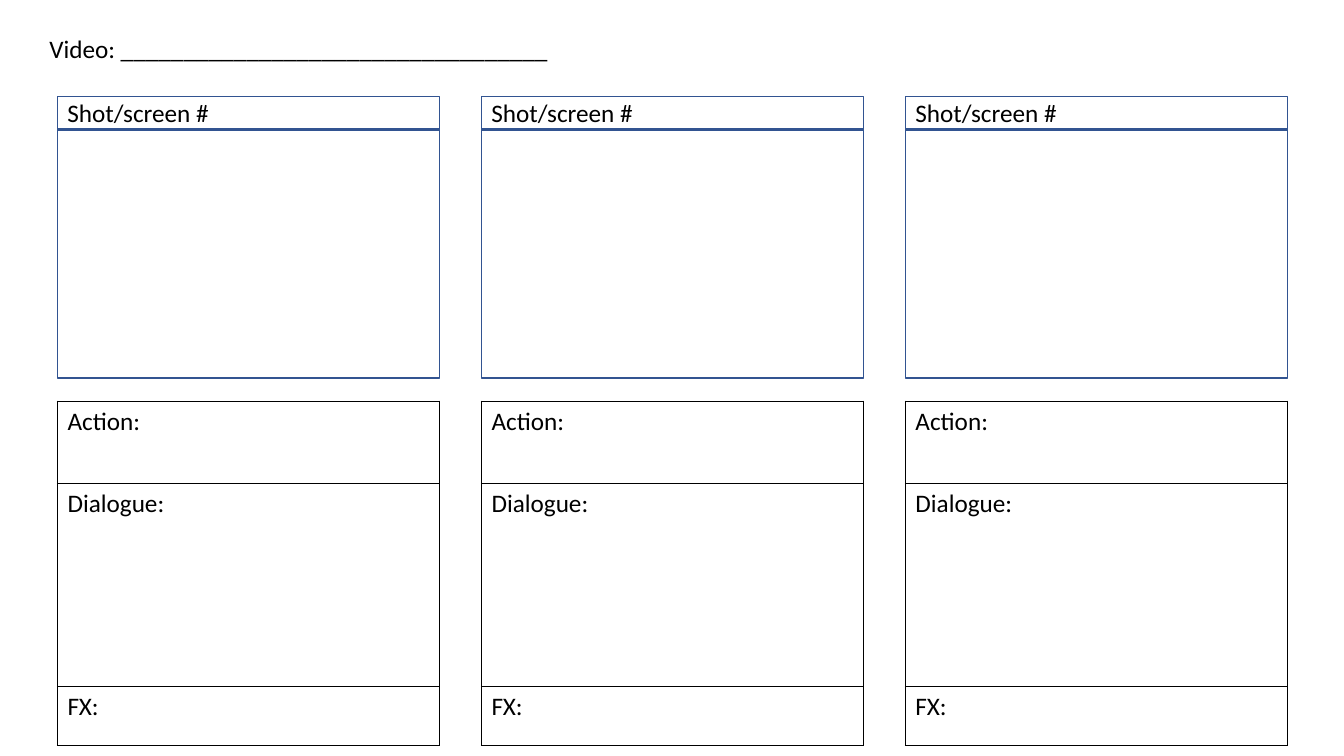
"""Build a three-column video storyboard sheet."""
from dataclasses import dataclass

from lxml.etree import SubElement
from pptx import Presentation
from pptx.dml.color import RGBColor
from pptx.enum.shapes import MSO_SHAPE
from pptx.enum.text import MSO_ANCHOR, MSO_AUTO_SIZE, PP_ALIGN
from pptx.oxml.ns import qn
from pptx.slide import Slide
from pptx.table import _Cell
from pptx.text.text import TextFrame
from pptx.util import Inches, Pt

BLACK = RGBColor(0x00, 0x00, 0x00)
FRAME_BLUE = RGBColor(0x32, 0x54, 0x91)
FONT_NAME = "Calibri"
FONT_SIZE = Pt(18)
LINE_WIDTH = Pt(1)

PANEL_COUNT = 3
PANEL_LEFT = 0.57
PANEL_PITCH = 4.205
PANEL_WIDTH = 3.79
NOTES_TOP = 3.98


@dataclass(frozen=True)
class Frame:
    top: float
    height: float
    label: str = ""


@dataclass(frozen=True)
class NoteRow:
    label: str
    height: float


FRAMES = [Frame(1.29, 2.46), Frame(0.96, 0.32, "Shot/screen #")]
NOTE_ROWS = [NoteRow("Action:", 0.82), NoteRow("Dialogue:", 2.01), NoteRow("FX:", 0.59)]


def write_text(text_frame: TextFrame, text: str) -> None:
    paragraph = text_frame.paragraphs[0]
    paragraph.alignment = PP_ALIGN.LEFT
    run = paragraph.add_run()
    run.text = text
    run.font.name = FONT_NAME
    run.font.size = FONT_SIZE
    run.font.color.rgb = BLACK


def add_title(slide: Slide) -> None:
    shape = slide.shapes.add_textbox(Inches(0.39), Inches(0.28), Inches(5.21), Inches(0.4))
    shape.text_frame.word_wrap = False
    shape.text_frame.auto_size = MSO_AUTO_SIZE.SHAPE_TO_FIT_TEXT
    write_text(shape.text_frame, "Video: " + "_" * 34)


def add_frame(slide: Slide, left: float, frame: Frame) -> None:
    shape = slide.shapes.add_shape(
        MSO_SHAPE.RECTANGLE, Inches(left), Inches(frame.top),
        Inches(PANEL_WIDTH), Inches(frame.height),
    )
    shape.shadow.inherit = False
    shape.fill.background()
    shape.line.color.rgb = FRAME_BLUE
    shape.line.width = LINE_WIDTH
    if frame.label:
        shape.text_frame.vertical_anchor = MSO_ANCHOR.MIDDLE
        write_text(shape.text_frame, frame.label)


def style_cell(cell: _Cell) -> None:
    cell.fill.background()
    properties = cell._tc.get_or_add_tcPr()
    for position, side in enumerate(("a:lnL", "a:lnR", "a:lnT", "a:lnB")):
        border = SubElement(properties, qn(side), w=str(LINE_WIDTH))
        fill = SubElement(border, qn("a:solidFill"))
        SubElement(fill, qn("a:srgbClr"), val=str(BLACK))
        properties.insert(position, border)


def add_notes(slide: Slide, left: float) -> None:
    height = sum(row.height for row in NOTE_ROWS)
    table = slide.shapes.add_table(
        len(NOTE_ROWS), 1, Inches(left), Inches(NOTES_TOP),
        Inches(PANEL_WIDTH), Inches(height),
    ).table
    table.first_row = False
    table.horz_banding = False
    for index, row in enumerate(NOTE_ROWS):
        table.rows[index].height = Inches(row.height)
        cell = table.cell(index, 0)
        write_text(cell.text_frame, row.label)
        style_cell(cell)


def main() -> None:
    presentation = Presentation()
    presentation.slide_width = Inches(13.33)
    presentation.slide_height = Inches(7.5)
    slide = presentation.slides.add_slide(presentation.slide_layouts[6])
    add_title(slide)
    for column in range(PANEL_COUNT):
        left = PANEL_LEFT + column * PANEL_PITCH
        for frame in FRAMES:
            add_frame(slide, left, frame)
        add_notes(slide, left)
    presentation.save("out.pptx")


if __name__ == "__main__":
    main()
